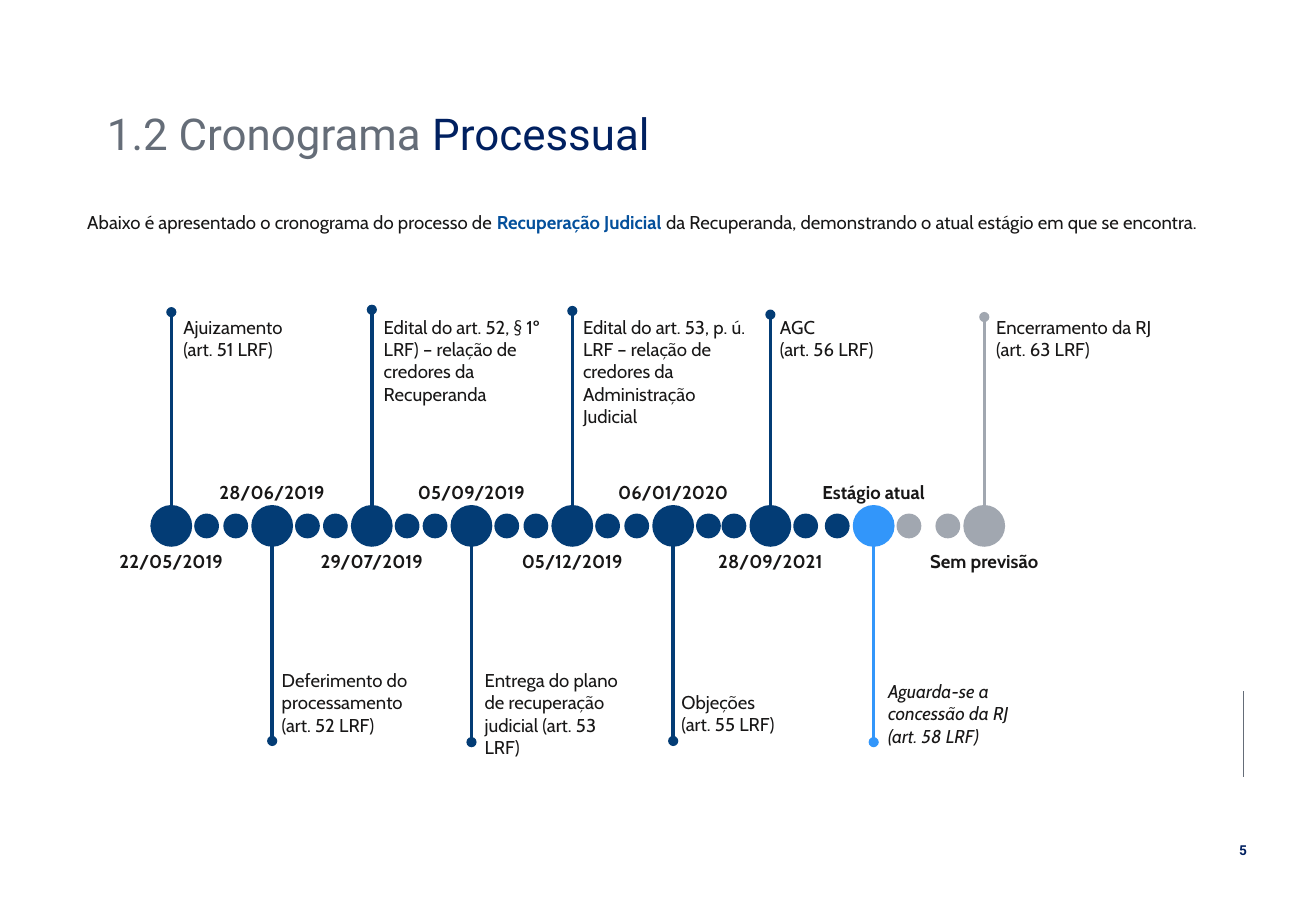
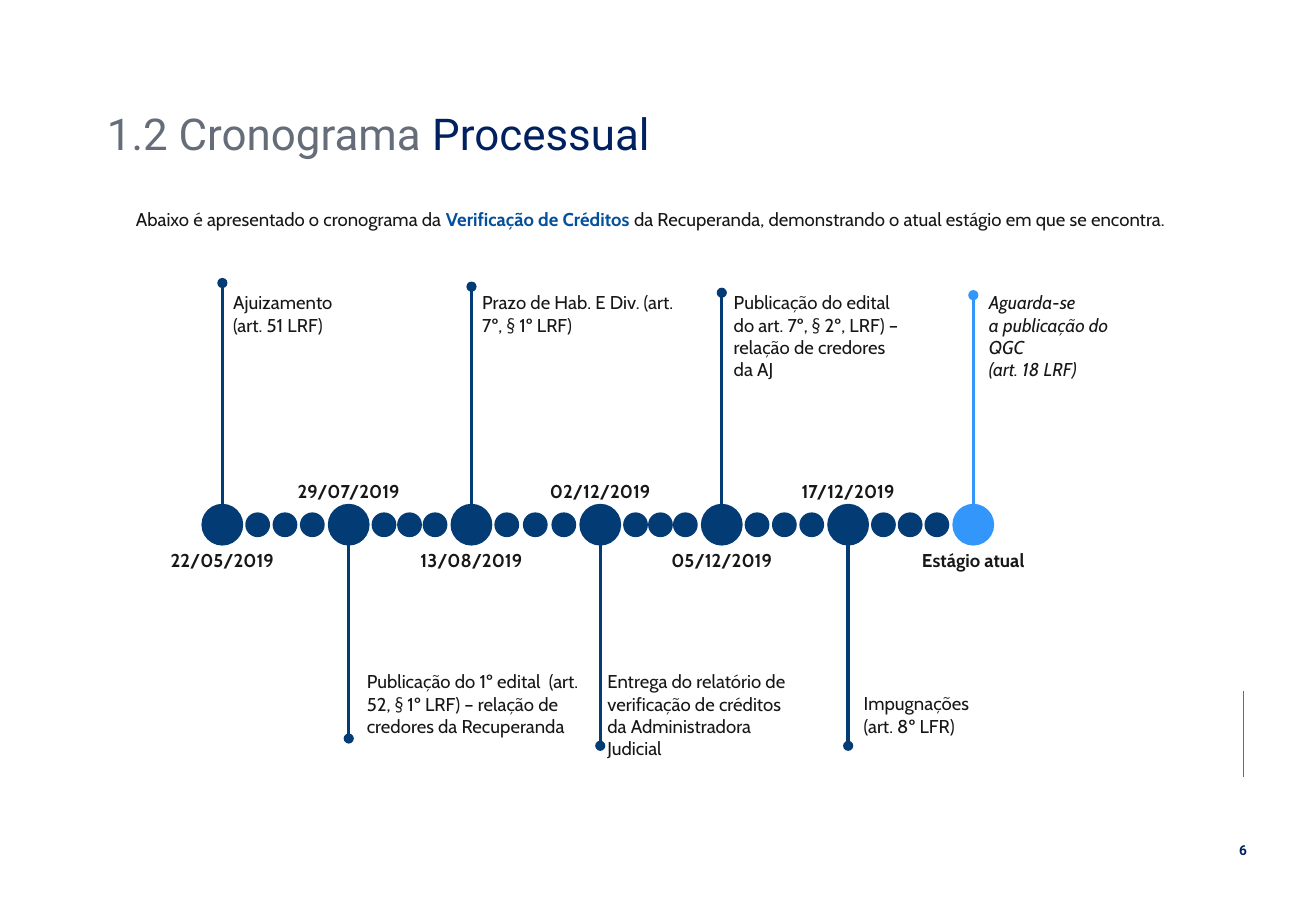
from lxml import etree
from pptx import Presentation
from pptx.dml.color import RGBColor
from pptx.enum.shapes import MSO_CONNECTOR, MSO_SHAPE
from pptx.enum.text import MSO_ANCHOR, MSO_AUTO_SIZE, PP_ALIGN
from pptx.oxml.ns import qn
from pptx.util import Inches, Pt

STRAIGHT = MSO_CONNECTOR.STRAIGHT
OVAL = MSO_SHAPE.OVAL
LEFT, CENTER, JUSTIFY = PP_ALIGN.LEFT, PP_ALIGN.CENTER, PP_ALIGN.JUSTIFY

NAVY, BLUE, SILVER = "033C75", "3296FA", "A1A7B0"
INK, ACCENT, SLATE, DEEP = "181717", "04509C", "656D78", "002060"

BODY = {"name": "Cabin", "size": Pt(11), "color": INK}
BOLD = {**BODY, "bold": True}
ITALIC = {**BODY, "italic": True}
KEYWORD = {**BOLD, "color": ACCENT}
TITLE = {"name": "Roboto", "size": Pt(26), "color": SLATE}
TITLE_END = {**TITLE, "color": DEEP}
NUMBER = {"name": "Roboto", "size": Pt(8.1), "color": DEEP, "bold": True}

NODE, DOT = 0.33, 0.19
DOT_START, DOT_END = 0.29, 0.30  # centre distance from the node before and after
DATE_WIDTH = 1.3

# Each milestone: centre, stem end, colour, date, label left, top, width, label.
TIMELINES = [
    {
        "number": "5", "axis": 4.33, "dots": 2, "intro_at": (0.31, 1.66),
        "intro": ("Abaixo é apresentado o cronograma do processo de ", "Recuperação Judicial "),
        "milestones": [
            (1.41, 2.57, NAVY, "22/05/2019", 1.41, 2.55, 1.11, "Ajuizamento (art. 51 LRF)"),
            (2.24, 6.10, NAVY, "28/06/2019", 2.22, 5.46, 1.37,
             "Deferimento do processamento (art. 52 LRF)"),
            (3.06, 2.55, NAVY, "29/07/2019", 3.06, 2.55, 1.53,
             "Edital do art. 52, § 1º LRF) – relação de credores da Recuperanda"),
            (3.88, 6.11, NAVY, "05/09/2019", 3.89, 5.46, 1.40,
             "Entrega do plano de recuperação judicial (art. 53 LRF)"),
            (4.71, 2.56, NAVY, "05/12/2019", 4.70, 2.55, 1.56,
             "Edital do art. 53, p. ú. LRF – relação de credores da Administração Judicial"),
            (5.54, 6.10, NAVY, "06/01/2020", 5.51, 5.64, 1.10, "Objeções\n(art. 55 LRF)"),
            (6.34, 2.59, NAVY, "28/09/2021", 6.32, 2.55, 1.61, "AGC\n(art. 56 LRF)"),
            (7.19, 6.11, BLUE, "Estágio atual", 7.21, 5.55, 1.53,
             "Aguarda-se a concessão da RJ\n(art. 58 LRF)"),
            (8.10, 2.61, SILVER, "Sem previsão", 8.10, 2.55, 1.58,
             "Encerramento da RJ\n(art. 63 LRF)"),
        ],
    },
    {
        "number": "6", "axis": 4.32, "dots": 3, "intro_at": (0.71, 1.64),
        "intro": ("Abaixo é apresentado o cronograma da ", "Verificação de Créditos "),
        "milestones": [
            (1.83, 2.33, NAVY, "22/05/2019", 1.82, 2.35, 1.12, "Ajuizamento (art. 51 LRF)"),
            (2.87, 6.08, NAVY, "29/07/2019", 2.92, 5.47, 1.99,
             "Publicação do 1º edital  (art. 52, § 1º LRF) – relação de credores da Recuperanda"),
            (3.88, 2.36, NAVY, "13/08/2019", 3.87, 2.35, 1.78,
             "Prazo de Hab. E Div. (art. 7º, § 1º LRF)"),
            (4.94, 6.14, NAVY, "02/12/2019", 4.90, 5.47, 1.78,
             "Entrega do relatório de verificação de créditos da Administradora Judicial"),
            (5.94, 2.41, NAVY, "05/12/2019", 5.94, 2.35, 1.57,
             "Publicação do edital do art. 7º, § 2º, LRF) – relação de credores da AJ"),
            (6.98, 6.14, NAVY, "17/12/2019", 7.01, 5.65, 1.26, "Impugnações (art. 8º LFR)"),
            (8.01, 2.43, BLUE, "Estágio atual", 8.04, 2.35, 1.40,
             "Aguarda-se\na publicação do QGC\n(art. 18 LRF)"),
        ],
    },
]


def paint(color_format, color):
    color_format.rgb = RGBColor.from_string(color)


def write(box, at, lines, align=LEFT, anchor=MSO_ANCHOR.TOP):
    """Place a box and fill it; each line is a list of (text, format) spans."""
    box.left, box.top, box.width, box.height = map(Inches, at)
    frame = box.text_frame
    frame.word_wrap = True
    frame.auto_size = MSO_AUTO_SIZE.NONE
    frame.vertical_anchor = anchor
    for index, spans in enumerate(lines):
        para = frame.add_paragraph() if index else frame.paragraphs[0]
        para.alignment = align
        for text, values in spans:
            span = para.add_run()
            span.text = text
            for name, value in values.items():
                if name == "color":
                    paint(span.font.color, value)
                else:
                    setattr(span.font, name, value)
    return frame.paragraphs[0]


deck = Presentation()
deck.slide_width, deck.slide_height = Inches(10.83), Inches(7.5)

for timeline in TIMELINES:
    page = deck.slides.add_slide(deck.slide_layouts[5])
    shapes = page.shapes
    axis, milestones = timeline["axis"], timeline["milestones"]

    title = write(shapes.title, (0.78, 0.86, 8.18, 0.53),
                  [[("1.2 Cronograma ", TITLE), ("Processual", TITLE_END)]],
                  anchor=MSO_ANCHOR.MIDDLE)
    title.line_spacing = 0.9
    write(shapes.add_textbox(0, 0, 0, 0), (10.06, 6.88, 0.34, 0.24),
          [[(timeline["number"], NUMBER)]], CENTER)

    opening, keyword = timeline["intro"]
    closing = "da Recuperanda, demonstrando o atual estágio em que se encontra."
    intro = write(shapes.add_textbox(0, 0, 0, 0), (*timeline["intro_at"], 10, 0.3),
                  [[(opening, BODY), (keyword, KEYWORD), (closing, BODY)]], JUSTIFY)
    intro.line_spacing = 1.14
    intro._p.get_or_add_pPr().set("indent", str(Inches(0.31)))

    # Side rule, then the stems, which end in an oval
    lines = [(10.23, 5.69, 6.4, SLATE, 0.5)]
    lines += [(center, axis, end, color, 2) for center, end, color, *_ in milestones]
    for x, start, end, color, width in lines:
        line = shapes.add_connector(STRAIGHT, Inches(x), Inches(start), Inches(x), Inches(end))
        paint(line.line.color, color)
        line.line.width = Pt(width)
        if color != SLATE:
            etree.SubElement(line.line._get_or_add_ln(), qn("a:tailEnd"), type="oval")
        etree.SubElement(line._element.spPr, qn("a:effectLst"))

    # Nodes, with evenly spaced dots between neighbours
    circles = [(center, NODE, color) for center, _, color, *_ in milestones]
    for before, after in zip(milestones, milestones[1:]):
        first, last = before[0] + DOT_START, after[0] - DOT_END
        step = (last - first) / (timeline["dots"] - 1)
        color = SILVER if after[2] == SILVER else NAVY
        circles += [(first + step * i, DOT, color) for i in range(timeline["dots"])]
    for center, size, color in circles:
        circle = shapes.add_shape(OVAL, Inches(center - size / 2), Inches(axis - size / 2),
                                  Inches(size), Inches(size))
        circle.shadow.inherit = False
        circle.fill.solid()
        paint(circle.fill.fore_color, color)
        paint(circle.line.color, color)
        circle.line.width = Pt(1)

    # The date sits on the side of the axis opposite its stem
    for center, end, color, date, left, top, width, label in milestones:
        date_top = axis + 0.15 if end < axis else axis - 0.42
        write(shapes.add_textbox(0, 0, 0, 0),
              (center - DATE_WIDTH / 2, date_top, DATE_WIDTH, 0.29), [[(date, BOLD)]], CENTER)
        style = ITALIC if color == BLUE else BODY
        write(shapes.add_textbox(0, 0, 0, 0), (left, top, width, 0.66),
              [[(text, style)] for text in label.split("\n")])

deck.save("out.pptx")
